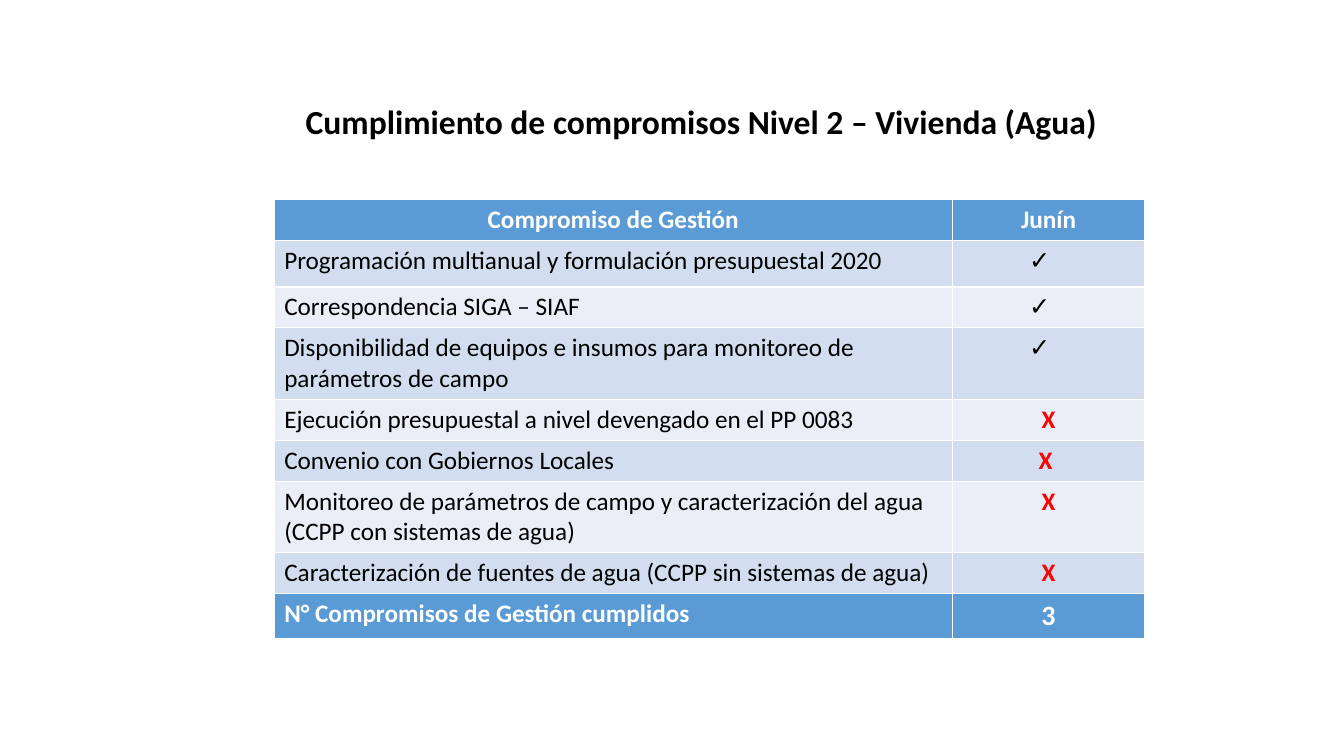
from lxml.etree import SubElement as Sub
from pptx import Presentation
from pptx.dml.color import RGBColor as Rgb
from pptx.enum.text import PP_ALIGN as Al
from pptx.oxml.ns import qn
from pptx.util import Cm, Pt

TITLE = "Cumplimiento de compromisos Nivel 2 – Vivienda (Agua)"
HEAD = ("Compromiso de Gestión", "Junín")
ITEMS = [
    ("Programación multianual y formulación presupuestal 2020", "✓", 1.17),
    ("Correspondencia SIGA – SIAF", "✓", 1.03),
    ("Disponibilidad de equipos e insumos para monitoreo de parámetros de campo", "✓", 1.79),
    ("Ejecución presupuestal a nivel devengado en el PP 0083", "X", 1.03),
    ("Convenio con Gobiernos Locales", "X", 1.03),
    ("Monitoreo de parámetros de campo y caracterización del agua (CCPP con sistemas de agua)", "X", 1.79),
    ("Caracterización de fuentes de agua (CCPP sin sistemas de agua)", "X", 1.03),
]
TOTAL = ("N° Compromisos de Gestión cumplidos", "3")
COLS = (17.09, 4.85)
EDGE = 1.03
NUDGE = {"✓": 0.45, "Convenio con Gobiernos Locales": 0.15}
THEME = {
    "font": "Calibri", "title": 24, "body": 18, "total": 20,
    "ink": "000000", "light": "FFFFFF", "miss": "FF0000",
    "main": "5B9BD5", "bands": ("D2DEEF", "EAEFF7"),
}


def write(frame, text, size="body", color="ink", bold=False, align=Al.LEFT):
    frame.word_wrap = True
    para = frame.paragraphs[0]
    para.alignment = align
    run = para.add_run()
    run.text = text
    font = run.font
    font.name, font.size, font.bold = THEME["font"], Pt(THEME[size]), bold
    font.color.rgb = Rgb.from_string(THEME[color])


def paint(cell, fill):
    props = cell._tc.get_or_add_tcPr()
    for side in ("lnL", "lnR", "lnT", "lnB"):
        line = Sub(props, qn("a:" + side), w=str(Pt(1)))
        Sub(Sub(line, qn("a:solidFill")), qn("a:srgbClr"), val=THEME["light"])
    cell.fill.solid()
    cell.fill.fore_color.rgb = Rgb.from_string(fill)


def add_title(slide):
    box = slide.shapes.add_textbox(Cm(5.92), Cm(2.41), Cm(23.95), Cm(1.27))
    box.text_frame.margin_right = Cm(0.69)
    write(box.text_frame, TITLE, size="title", bold=True, align=Al.CENTER)


def add_grid(slide):
    highs = [EDGE, *(high for _, _, high in ITEMS), EDGE + 0.05]
    grid = slide.shapes.add_table(
        len(highs), len(COLS), Cm(6.91), Cm(5.03), Cm(sum(COLS)), Cm(sum(highs))
    ).table
    for col, wide in zip(grid.columns, COLS):
        col.width = Cm(wide)
    for row, high in zip(grid.rows, highs):
        row.height = Cm(high)

    last = len(highs) - 1
    for col, text in enumerate(HEAD):
        cell = grid.cell(0, col)
        paint(cell, THEME["main"])
        write(cell.text_frame, text, color="light", bold=True, align=Al.CENTER)

    for row, (name, mark, _) in enumerate(ITEMS, 1):
        left, right = grid.cell(row, 0), grid.cell(row, 1)
        for cell in (left, right):
            paint(cell, THEME["bands"][(row - 1) % 2])
        write(left.text_frame, name)
        miss = mark == "X"
        shift = NUDGE.get(mark, NUDGE.get(name, 0))
        right.margin_right = Cm(0.25 + shift)
        write(right.text_frame, mark, color="miss" if miss else "ink",
              bold=miss, align=Al.CENTER)

    for col, (text, size, align) in enumerate(
        zip(TOTAL, ("body", "total"), (Al.LEFT, Al.CENTER))
    ):
        cell = grid.cell(last, col)
        paint(cell, THEME["main"])
        write(cell.text_frame, text, size=size, color="light", bold=True, align=align)


def main():
    deck = Presentation()
    deck.slide_width, deck.slide_height = Cm(33.87), Cm(19.05)
    slide = deck.slides.add_slide(deck.slide_layouts[6])
    add_grid(slide)
    add_title(slide)
    deck.save("out.pptx")


if __name__ == "__main__":
    main()
